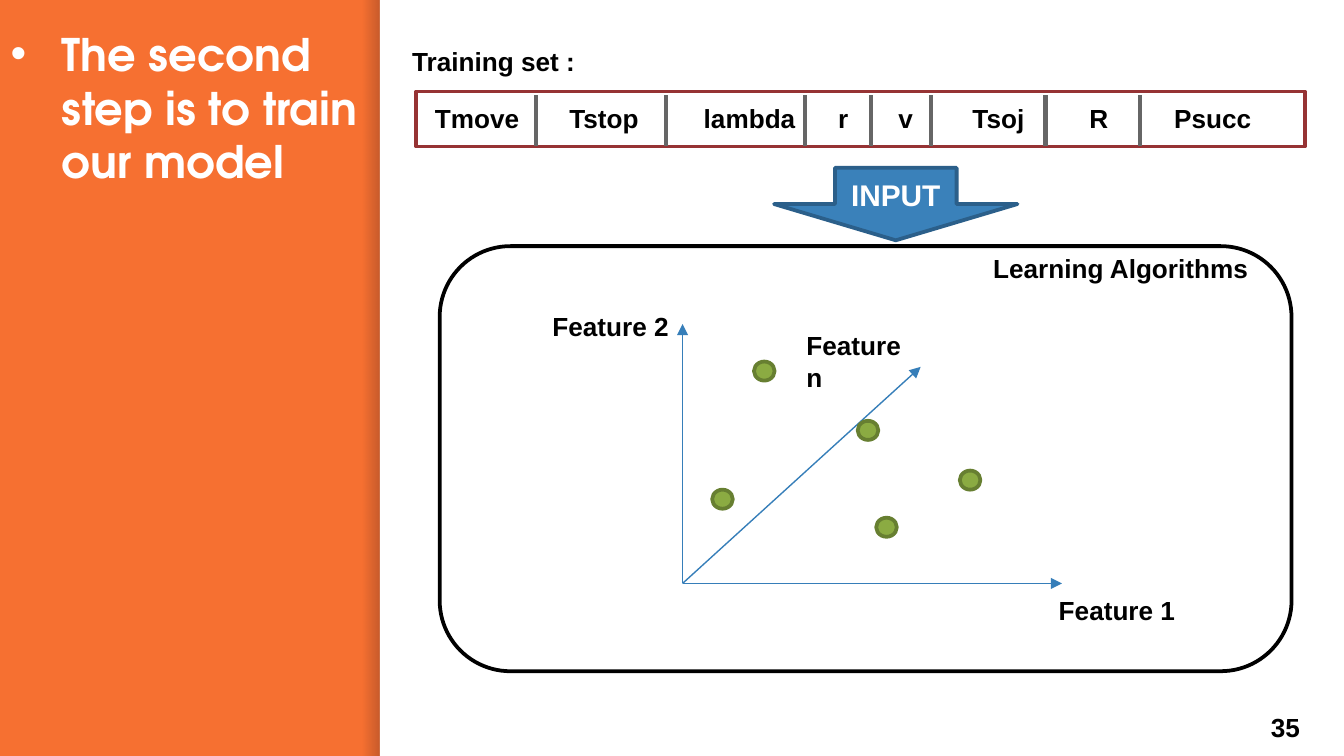
from lxml.etree import SubElement
from pptx import Presentation
from pptx.dml.color import RGBColor
from pptx.enum.shapes import MSO_CONNECTOR, MSO_SHAPE
from pptx.enum.text import MSO_ANCHOR as Anchor, MSO_AUTO_SIZE as AutoSize, PP_ALIGN as Align
from pptx.oxml.ns import qn
from pptx.util import Cm, Pt

SLIDE_W, SLIDE_H = 25.4, 14.28
FEATURES = [("Tmove", 0), ("Tstop", 2.54), ("lambda", 5.08), ("r", 7.62),
            ("v", 8.76), ("Tsoj", 10.16), ("R", 12.37), ("Psucc", 13.97)]
DIVIDERS = [2.26, 4.72, 7.34, 8.59, 9.73, 11.89, 13.67]
ORIGIN = (4.59, 6.37)
AXES = [("Feature 1", (11.76, 6.37), (11.45, 6.45)),
        ("Feature 2", (4.59, 1.47), (1.88, 1.09)),
        ("Feature n", (9.09, 2.28), (6.68, 1.45))]
SAMPLES = [(5.94, 2.18), (7.9, 3.3), (8.25, 5.13), (9.83, 4.24), (5.15, 4.6)]


def color(hex_code):
    return RGBColor.from_string(hex_code)


def add_run(paragraph, wording, size=14, ink="000000", face="Arial"):
    run = paragraph.add_run()
    run.text = wording
    run.font.size = Pt(size)
    run.font.bold = True
    run.font.name = face
    run.font.color.rgb = color(ink)


def add_label(shapes, box, wording, wrap=False):
    label = shapes.add_textbox(*map(Cm, box))
    label.text_frame.word_wrap = wrap
    add_run(label.text_frame.paragraphs[0], wording)
    return label


def add_figure(shapes, preset, box, fill=None, outline=None):
    figure = shapes.add_shape(preset, *map(Cm, box))
    figure.shadow.inherit = False
    if fill:
        figure.fill.solid()
        figure.fill.fore_color.rgb = color(fill)
    else:
        figure.fill.background()
    if outline:
        figure.line.color.rgb = color(outline)
        figure.line.width = Pt(2)
    else:
        figure.line.fill.background()
    return figure


def add_line(shapes, start, end, ink, width, arrow=False):
    line = shapes.add_connector(MSO_CONNECTOR.STRAIGHT, *map(Cm, (*start, *end)))
    line.line.color.rgb = color(ink)
    line.line.width = Pt(width)
    properties = line.element.spPr
    if arrow:
        SubElement(properties.find(qn("a:ln")), qn("a:tailEnd"), type="triangle")
    SubElement(properties, qn("a:effectLst"))


def build_backdrop(slide, left, top, width, height):
    slide.background.fill.solid()
    slide.background.fill.fore_color.rgb = color("F67031")
    edge = add_figure(slide.shapes, MSO_SHAPE.RECTANGLE, (left - 0.32, top, 0.32, height))
    edge.fill.gradient()
    edge.fill.gradient_angle = 0
    for stop, alpha in zip(edge.fill.gradient_stops, (0, 20000)):
        stop.color.rgb = color("000014")
    for tint, alpha in zip(edge.element.spPr.iter(qn("a:srgbClr")), (0, 20000)):
        SubElement(tint, qn("a:alpha"), val=str(alpha))
    add_figure(slide.shapes, MSO_SHAPE.RECTANGLE, (left, top, width, height), "FFFFFF")


def build_title(slide, left, top, width, height):
    title = slide.shapes.title
    title.left, title.top, title.width, title.height = map(Cm, (left, top, width, height))
    frame = title.text_frame
    frame.word_wrap = True
    frame.auto_size = AutoSize.NONE
    frame.vertical_anchor = Anchor.TOP
    frame.margin_left = frame.margin_right = frame.margin_top = frame.margin_bottom = Cm(0.25)
    statement = frame.paragraphs[0]
    statement.alignment = Align.LEFT
    add_run(statement, "The second step is to train our model", 24, "FFFFFF", "TeX Gyre Adventor")
    bullet = statement._p.get_or_add_pPr()
    bullet.set("marL", str(Cm(0.97)))
    bullet.set("indent", str(-Cm(0.97)))
    SubElement(SubElement(bullet, qn("a:buClr")), qn("a:srgbClr"), val="FFFFFF")
    SubElement(bullet, qn("a:buFont"), typeface="Arial")
    SubElement(bullet, qn("a:buChar"), char="•")


def build_training_set(slide, left, top, width, height):
    add_label(slide.shapes, (left - 0.33, top - 0.99, 3.63, 0.86), "Training set :")
    names = add_label(slide.shapes, (left + 0.1, top + 0.08, 17.42, 1.45),
                      "\t".join(name for name, _ in FEATURES), wrap=True)
    tabs = SubElement(names.text_frame.paragraphs[0]._p.get_or_add_pPr(), qn("a:tabLst"))
    for _, stop in FEATURES[1:]:
        SubElement(tabs, qn("a:tab"), pos=str(Cm(stop)), algn="l")
    strip = slide.shapes.add_group_shape().shapes
    add_figure(strip, MSO_SHAPE.RECTANGLE, (left, top, width, height), outline="963334")
    for offset in DIVIDERS:
        x = left + offset
        add_line(strip, (x, top + 0.07), (x, top + height - 0.02), "666666", 2.25)


def build_input_arrow(slide, *box):
    arrow = add_figure(slide.shapes, MSO_SHAPE.DOWN_ARROW, box, "3A81BA", "2B5F8A")
    frame = arrow.text_frame
    frame.word_wrap = True
    frame.vertical_anchor = Anchor.MIDDLE
    frame.paragraphs[0].alignment = Align.CENTER
    add_run(frame.paragraphs[0], "INPUT", 16, "FFFFFF")


def build_learning_panel(slide, left, top, width, height):
    def place(point):
        return left + point[0], top + point[1]

    shapes = slide.shapes
    add_figure(shapes, MSO_SHAPE.ROUNDED_RECTANGLE, (left, top, width, height), "FFFFFF", "000000")
    add_label(shapes, (left + width - 5.89, top, 5.51, 0.86), "Learning Algorithms")
    for name, tip, corner in AXES:
        add_line(shapes, place(ORIGIN), place(tip), "367EB9", 0.75, arrow=True)
        add_label(shapes, (*place(corner), 2.72, 0.86), name)
    for sample in SAMPLES:
        add_figure(shapes, MSO_SHAPE.OVAL, (*place(sample), 0.39, 0.36), "8BAB42", "677F31")


def build_page_number(slide, *box):
    number = add_label(slide.shapes, box, "35", wrap=True)
    number.text_frame.vertical_anchor = Anchor.MIDDLE


def main():
    deck = Presentation()
    deck.slide_width, deck.slide_height = Cm(SLIDE_W), Cm(SLIDE_H)
    slide = deck.slides.add_slide(deck.slide_layouts[5])
    build_backdrop(slide, 7.18, 0, SLIDE_W - 7.18, SLIDE_H)
    build_title(slide, -0.05, 0.25, 7.34, 3.63)
    build_page_number(slide, 23.77, 13.18, 1.52, 1.09)
    build_training_set(slide, 7.87, 1.73, 16.79, 1.04)
    build_learning_panel(slide, 8.31, 4.65, 16.1, 8.03)
    build_input_arrow(slide, 14.63, 3.17, 4.6, 1.37)
    deck.save("out.pptx")


if __name__ == "__main__":
    main()
